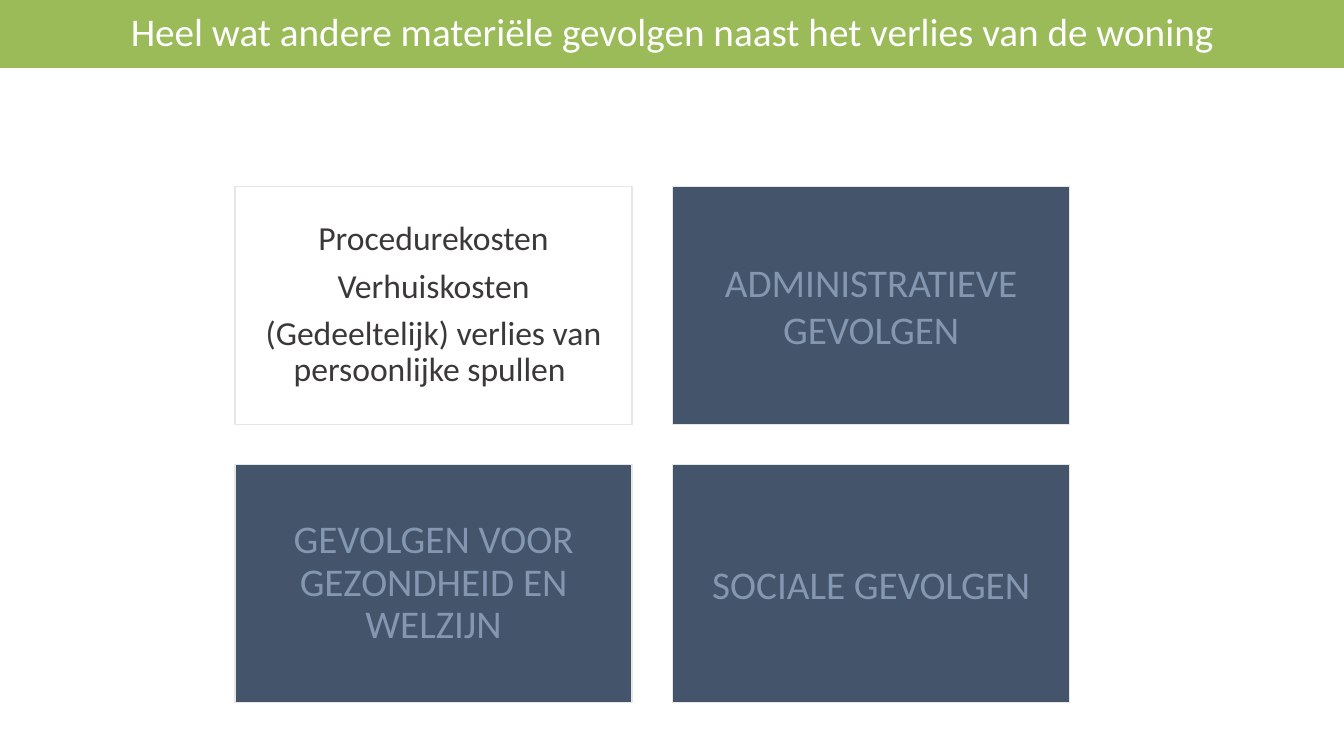
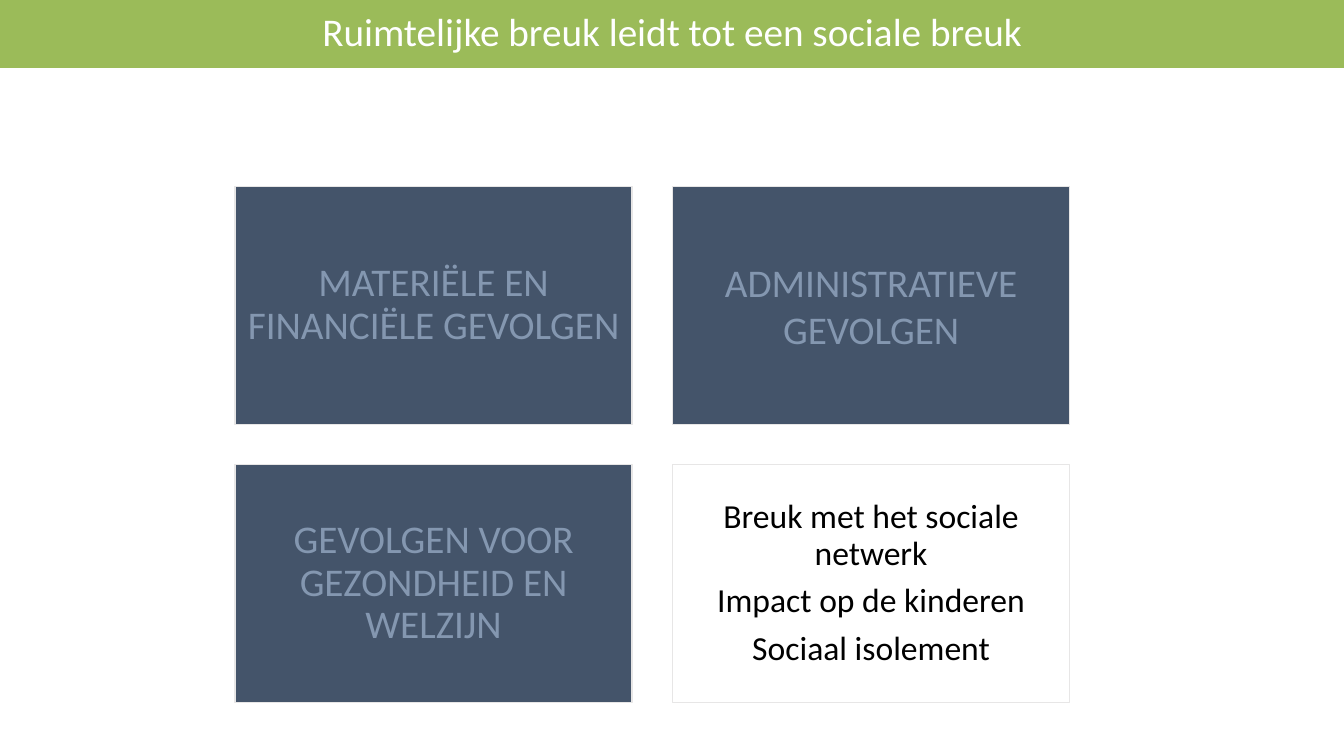
from pptx import Presentation, util as u
from pptx.dml.color import RGBColor
from pptx.enum import shapes, text

GREEN = RGBColor(0x9B, 0xBB, 0x59)
WHITE = RGBColor(0xFF, 0xFF, 0xFF)
NAVY = RGBColor(0x44, 0x54, 0x6A)
STEEL = RGBColor(0x84, 0x97, 0xB0)
PALE = RGBColor(0xE7, 0xE6, 0xE6)
CHARCOAL = RGBColor(0x3B, 0x38, 0x38)
BLACK = RGBColor(0, 0, 0)

PAGE_WIDTH, PAGE_HEIGHT = 13.33, 7.5
BAND_SHARE = 0.09
GRID_LEFT, GRID_TOP = 2.33, 1.85
TILE_WIDTH, TILE_HEIGHT, GAP = 3.94, 2.36, 0.4

MATERIAL = "MATERIËLE EN FINANCIËLE GEVOLGEN"
ADMINISTRATIVE = "ADMINISTRATIEVE GEVOLGEN"
HEALTH = "GEVOLGEN VOOR GEZONDHEID EN WELZIJN"
SOCIAL = "SOCIALE GEVOLGEN"


class Slides:
    """Holds the shared style and the page being filled."""

    font = "Calibri"

    def __init__(self):
        self.deck = Presentation()
        self.deck.slide_width = u.Inches(PAGE_WIDTH)
        self.deck.slide_height = u.Inches(PAGE_HEIGHT)
        self.page = None

    def add_page(self, title):
        """Start a page with a green title band over white."""
        self.page = self.deck.slides.add_slide(self.deck.slide_layouts[6])
        fill = self.page.background.fill
        fill.gradient()
        fill.gradient_angle = 270
        for stop, color in zip(fill.gradient_stops, (GREEN, WHITE)):
            stop.position = BAND_SHARE
            stop.color.rgb = color
        box = self.page.shapes.add_textbox(
            0, 0, self.deck.slide_width, u.Inches(BAND_SHARE * PAGE_HEIGHT))
        self.set_text(box, [title], 28, WHITE)

    def set_text(self, box, lines, size, color, spacing=0.9, after=0, inset=None):
        """Fill a box with centred paragraphs."""
        frame = box.text_frame
        frame.word_wrap = True
        frame.vertical_anchor = text.MSO_ANCHOR.MIDDLE
        if inset is not None:
            frame.margin_left = frame.margin_right = u.Inches(inset)
            frame.margin_top = frame.margin_bottom = u.Inches(inset)
        frame.text = "\n".join(lines)
        for para in frame.paragraphs:
            para.alignment = text.PP_ALIGN.CENTER
            para.line_spacing = spacing
            para.space_after = u.Pt(after)
            para.font.name = self.font
            para.font.size = u.Pt(size)
            para.font.color.rgb = color

    def tile(self, column, row):
        """Draw an unfilled, outlined tile in the two by two grid."""
        box = self.page.shapes.add_shape(
            shapes.MSO_SHAPE.RECTANGLE,
            u.Inches(GRID_LEFT + column * (TILE_WIDTH + GAP)),
            u.Inches(GRID_TOP + row * (TILE_HEIGHT + GAP)),
            u.Inches(TILE_WIDTH), u.Inches(TILE_HEIGHT))
        box.shadow.inherit = False
        box.fill.background()
        box.line.color.rgb = PALE
        box.line.width = u.Pt(1)
        return box

    def topic(self, column, row, label, spacing=0.9):
        """Add a dark tile that names a theme."""
        box = self.tile(column, row)
        box.fill.solid()
        box.fill.fore_color.rgb = NAVY
        self.set_text(box, [label], 28, STEEL, spacing, inset=0.12)

    def details(self, column, row, lines, color):
        """Add an open tile that lists the points of a theme."""
        self.set_text(self.tile(column, row), lines, 24, color, after=8, inset=0.1)


def main():
    slides = Slides()

    slides.add_page("Heel wat andere materiële gevolgen naast het verlies van de woning")
    slides.details(0, 0, ["Procedurekosten", "Verhuiskosten",
                          "(Gedeeltelijk) verlies van persoonlijke spullen "], CHARCOAL)
    slides.topic(1, 0, ADMINISTRATIVE, spacing=1.0)
    slides.topic(0, 1, HEALTH)
    slides.topic(1, 1, SOCIAL, spacing=1.0)

    slides.add_page("Ruimtelijke breuk leidt tot een sociale breuk")
    slides.topic(0, 0, MATERIAL)
    slides.topic(1, 0, ADMINISTRATIVE, spacing=1.0)
    slides.topic(0, 1, HEALTH)
    slides.details(1, 1, ["Breuk met het sociale netwerk", "Impact op de kinderen",
                          "Sociaal isolement"], BLACK)

    slides.deck.save("out.pptx")


if __name__ == "__main__":
    main()
